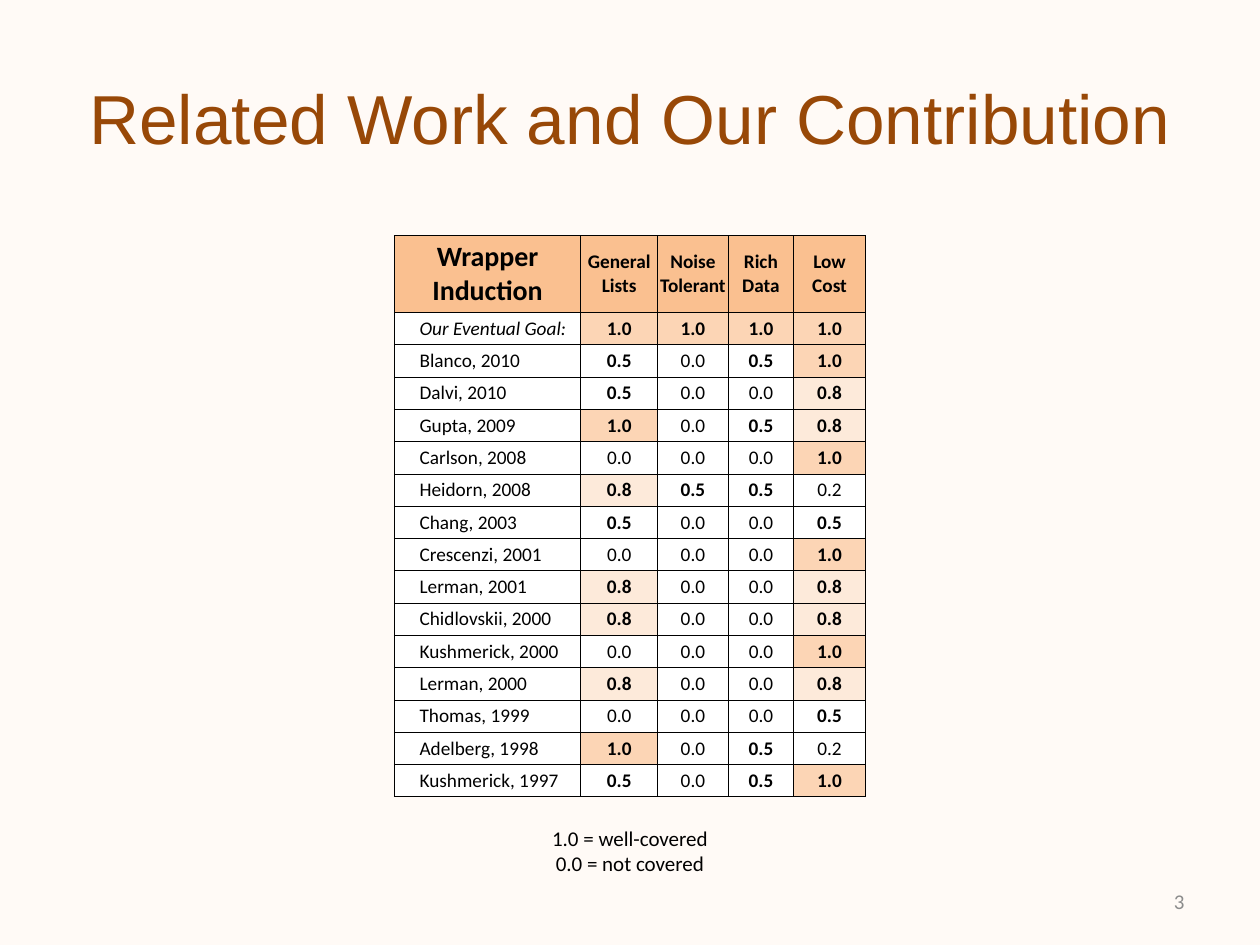
"""Build a slide that scores related work on wrapper induction."""
from lxml.etree import SubElement
from pptx import Presentation
from pptx.dml.color import RGBColor
from pptx.enum.text import MSO_ANCHOR as Anchor, PP_ALIGN as Align
from pptx.oxml.ns import qn
from pptx.util import Inches, Pt

TITLE = "Related Work and Our Contribution"
PAGE_NUMBER = "3"
LEGEND = "1.0 = well-covered\n0.0 = not covered"
HEADINGS = ["Wrapper Induction", "General Lists", "Noise Tolerant", "Rich Data", "Low\nCost"]
GOAL = "Our Eventual Goal:"
SCORES = [
    (GOAL, 1.0, 1.0, 1.0, 1.0),
    ("Blanco, 2010", 0.5, 0.0, 0.5, 1.0),
    ("Dalvi, 2010", 0.5, 0.0, 0.0, 0.8),
    ("Gupta, 2009", 1.0, 0.0, 0.5, 0.8),
    ("Carlson, 2008", 0.0, 0.0, 0.0, 1.0),
    ("Heidorn, 2008", 0.8, 0.5, 0.5, 0.2),
    ("Chang, 2003", 0.5, 0.0, 0.0, 0.5),
    ("Crescenzi, 2001", 0.0, 0.0, 0.0, 1.0),
    ("Lerman, 2001", 0.8, 0.0, 0.0, 0.8),
    ("Chidlovskii, 2000", 0.8, 0.0, 0.0, 0.8),
    ("Kushmerick, 2000", 0.0, 0.0, 0.0, 1.0),
    ("Lerman, 2000", 0.8, 0.0, 0.0, 0.8),
    ("Thomas, 1999", 0.0, 0.0, 0.0, 0.5),
    ("Adelberg, 1998", 1.0, 0.0, 0.5, 0.2),
    ("Kushmerick, 1997", 0.5, 0.0, 0.5, 1.0),
]
SCORE_FILLS = {1.0: "FCD5B5", 0.8: "FDEADA"}
HEADING_FILL, PLAIN_FILL = "FAC090", "FFFFFF"

SLIDE_WIDTH, SLIDE_HEIGHT = 10, 7.5
MARGIN = 0.05 * SLIDE_WIDTH
COLUMN_WIDTHS = [1.48, 0.61, 0.56, 0.52, 0.57]
TABLE_TOP, TABLE_HEIGHT, HEADING_HEIGHT = 1.87, 4.46, 0.61
LEGEND_WIDTH, NUMBER_WIDTH = 1.58, 2.33


def color(value):
    return RGBColor.from_string(value)


def write(frame, text, size=11, font="Calibri", ink="000000", bold=False,
          italic=False, align=Align.CENTER, indent=0):
    frame.word_wrap = True
    for index, line in enumerate(text.split("\n")):
        para = frame.add_paragraph() if index else frame.paragraphs[0]
        para.alignment = align
        if indent:
            para._p.get_or_add_pPr().set("marL", str(Inches(indent)))
        span = para.add_run()
        span.text = line
        span.font.size, span.font.name = Pt(size), font
        span.font.bold, span.font.italic = bold, italic
        span.font.color.rgb = color(ink)


def add_text(page, text, left, top, width, height, anchor=Anchor.MIDDLE, **style):
    box = page.shapes.add_textbox(*map(Inches, (left, top, width, height)))
    box.text_frame.vertical_anchor = anchor
    write(box.text_frame, text, **style)


def fill_cell(cell, text, fill, **style):
    cell.margin_left = cell.margin_right = cell.margin_top = cell.margin_bottom = 0
    cell.vertical_anchor = Anchor.MIDDLE
    for side in ("a:lnL", "a:lnR", "a:lnT", "a:lnB"):
        line = SubElement(cell._tc.get_or_add_tcPr(), qn(side), w=str(Pt(0.5)))
        SubElement(SubElement(line, qn("a:solidFill")), qn("a:srgbClr"), val="000000")
    cell.fill.solid()
    cell.fill.fore_color.rgb = color(fill)
    write(cell.text_frame, text, **style)


def add_score_table(page):
    width = sum(COLUMN_WIDTHS)
    place = ((SLIDE_WIDTH - width) / 2, TABLE_TOP, width, TABLE_HEIGHT)
    table = page.shapes.add_table(len(SCORES) + 1, len(HEADINGS), *map(Inches, place)).table
    for column, column_width in zip(table.columns, COLUMN_WIDTHS):
        column.width = Inches(column_width)
    for row in table.rows:
        row.height = Inches((TABLE_HEIGHT - HEADING_HEIGHT) / len(SCORES))
    table.rows[0].height = Inches(HEADING_HEIGHT)

    for column, heading in enumerate(HEADINGS):
        fill_cell(table.cell(0, column), heading, HEADING_FILL,
                  size=11 if column else 16, bold=True)
    for row, (work, *scores) in enumerate(SCORES, 1):
        fill_cell(table.cell(row, 0), work, PLAIN_FILL, italic=work == GOAL,
                  align=Align.LEFT, indent=0.2)
        for column, score in enumerate(scores, 1):
            fill_cell(table.cell(row, column), f"{score:.1f}",
                      SCORE_FILLS.get(score, PLAIN_FILL), bold=score >= 0.5)


def main():
    deck = Presentation()
    deck.slide_width, deck.slide_height = Inches(SLIDE_WIDTH), Inches(SLIDE_HEIGHT)
    page = deck.slides.add_slide(deck.slide_layouts[6])
    page.background.fill.solid()
    page.background.fill.fore_color.rgb = color("FFFAF6")

    add_text(page, TITLE, MARGIN, 0.3, SLIDE_WIDTH - 2 * MARGIN, 1.25,
             size=39.6, font="Arial", ink="984807")
    add_text(page, PAGE_NUMBER, SLIDE_WIDTH - MARGIN - NUMBER_WIDTH, 6.95,
             NUMBER_WIDTH, 0.4, size=12, ink="8C8C8C", align=Align.RIGHT)
    add_score_table(page)
    add_text(page, LEGEND, (SLIDE_WIDTH - LEGEND_WIDTH) / 2, 6.5, LEGEND_WIDTH, 0.5,
             anchor=Anchor.TOP, size=12)
    deck.save("out.pptx")


if __name__ == "__main__":
    main()
